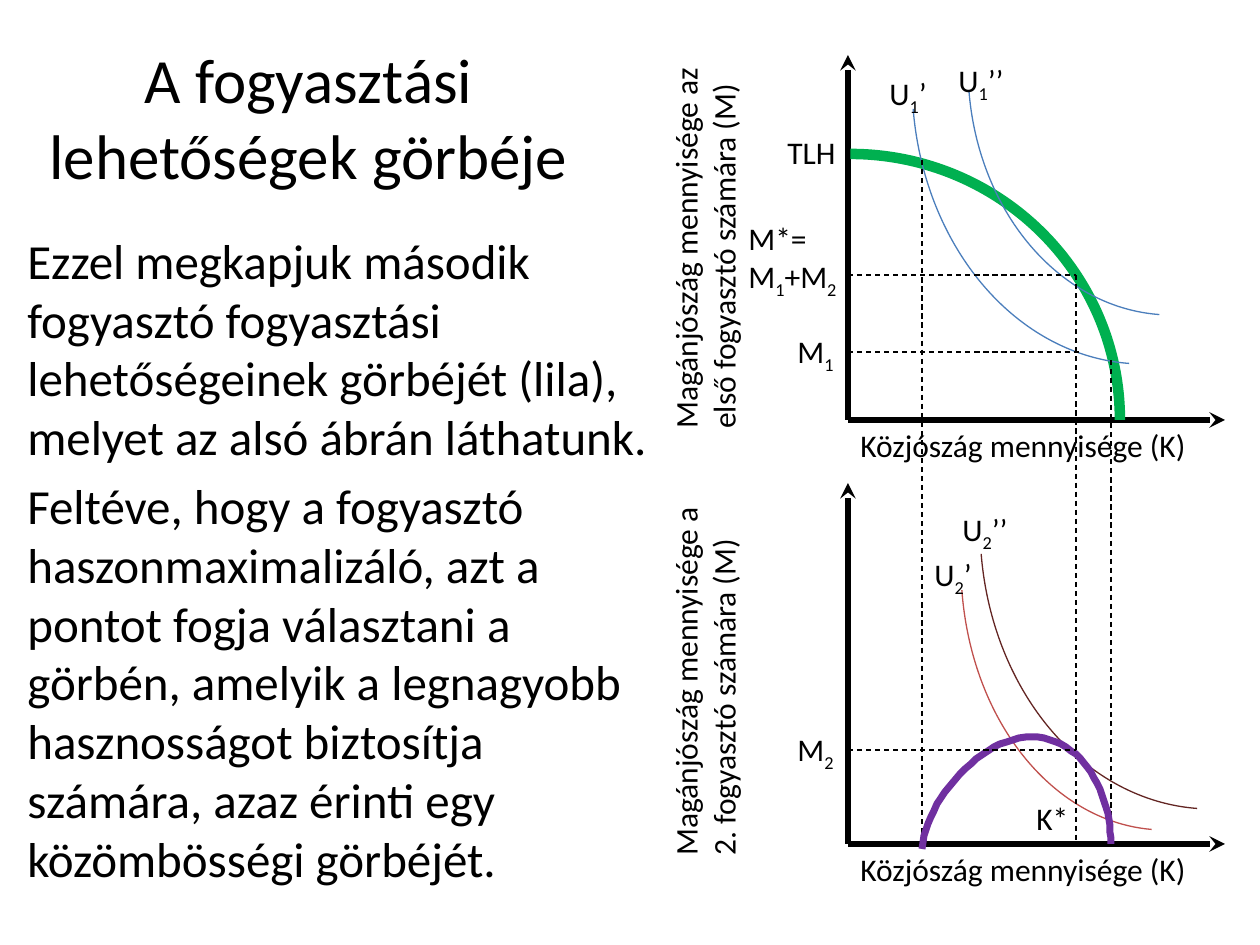
from lxml import etree
from pptx import Presentation
from pptx.dml.color import RGBColor
from pptx.enum.dml import MSO_LINE
from pptx.enum.shapes import MSO_CONNECTOR, MSO_SHAPE
from pptx.enum.text import MSO_ANCHOR, PP_ALIGN
from pptx.oxml.ns import qn
from pptx.util import Pt

PX = 914400 / 126
BLACK = RGBColor(0x00, 0x00, 0x00)
GREEN = RGBColor(0x00, 0xB0, 0x50)
BLUE = RGBColor(0x4B, 0x7E, 0xBC)
RED = RGBColor(0xC0, 0x50, 0x4D)
MAROON = RGBColor(0x63, 0x25, 0x23)
PURPLE = RGBColor(0x70, 0x30, 0xA0)
STRAIGHT = MSO_CONNECTOR.STRAIGHT
ARC = MSO_SHAPE.ARC
DASH = MSO_LINE.DASH
TOP, MIDDLE = MSO_ANCHOR.TOP, MSO_ANCHOR.MIDDLE
LEFT, CENTER = PP_ALIGN.LEFT, PP_ALIGN.CENTER

deck = Presentation()
deck.slide_width = round(1260 * PX)
deck.slide_height = round(945 * PX)
page = deck.slides.add_slide(deck.slide_layouts[6])


def add_text(text, at, size=18, align=LEFT, anchor=TOP, before=0, rotation=0):
    box = page.shapes.add_textbox(*(round(v * PX) for v in at))
    box.rotation = rotation
    frame = box.text_frame
    frame.word_wrap = True
    frame.vertical_anchor = anchor
    for index, line in enumerate(text.split("\n")):
        para = frame.add_paragraph() if index else frame.paragraphs[0]
        para.alignment = align
        para.space_before = Pt(before)
        for part, piece in enumerate(line.split("|")):
            for row, words in enumerate(piece.split("\v")):
                if row:
                    para.add_line_break()
                if not words:
                    continue
                span = para.add_run()
                span.text = words
                span.font.name = "Calibri"
                span.font.size = Pt(size)
                span.font.color.rgb = BLACK
                if part % 2:
                    span.font._element.set("baseline", "-25000")


def add_line(start, end, width=0.75, dash=None, arrow=False):
    line = page.shapes.add_connector(
        STRAIGHT, *(round(v * PX) for v in (*start, *end)))
    line.line.color.rgb = BLACK
    line.line.width = Pt(width)
    if dash:
        line.line.dash_style = dash
    if arrow:
        etree.SubElement(line.line._get_or_add_ln(), qn("a:tailEnd"), type="stealth")
    etree.SubElement(line._element.spPr, qn("a:effectLst"))


add_text("A fogyasztási lehetőségek görbéje", (25, 37, 567, 158),
         size=36, align=CENTER, anchor=MIDDLE)
add_text("Ezzel megkapjuk második fogyasztó fogyasztási lehetőségeinek görbéjét "
         "(lila), melyet az alsó ábrán láthatunk.\n"
         "Feltéve, hogy a fogyasztó haszonmaximalizáló, azt a pontot fogja "
         "választani a görbén, amelyik a legnagyobb hasznosságot biztosítja "
         "számára, azaz érinti egy közömbösségi görbéjét.",
         (15, 224, 665, 624), size=28, before=5.6)

ORIGIN_X, AXIS_END = 848, 1225
for base, top, title_top, title in (
    (420, 55, 193, "Magánjószág mennyisége az első fogyasztó számára (M)"),
    (844, 483, 620, "Magánjószág mennyisége a\v2. fogyasztó számára (M)"),
):
    add_line((ORIGIN_X, base), (AXIS_END, base), width=3, arrow=True)
    add_line((ORIGIN_X, base), (ORIGIN_X, top), width=3, arrow=True)
    add_text("Közjószág mennyisége (K)", (ORIGIN_X, base, 407, 50))
    add_text(title, (501, title_top, 407, 89), rotation=270)

FRONTIER = (270 * 0.6, 0)
INDIFFERENCE = (55.685, 103.833)
for at, angles, color, width in (
    ((581, 154, 539, 532), FRONTIER, GREEN, 6),
    ((968, -181, 407, 496), INDIFFERENCE, BLUE, 0.75),
    ((912, -202, 462, 566), INDIFFERENCE, BLUE, 0.75),
    ((961, 301, 407, 529), INDIFFERENCE, RED, 0.75),
    ((980, 243, 462, 566), INDIFFERENCE, MAROON, 0.75),
):
    arc = page.shapes.add_shape(ARC, *(round(v * PX) for v in at))
    arc.shadow.inherit = False
    arc.fill.background()
    arc.line.color.rgb = color
    arc.line.width = Pt(width)
    arc.adjustments[0], arc.adjustments[1] = angles

for x, top, bottom in ((922, 160, 844), (1076, 275, 847), (1111, 360, 844)):
    add_line((x, top), (x, bottom), dash=DASH)

STEPS = 24
points = []
for curve in (
    ((922, 849), (926, 800), (982, 736), (1032, 737)),
    ((1032, 737), (1084, 738), (1111, 795), (1111, 844)),
):
    for step in range(STEPS + 1):
        t = step / STEPS
        weights = ((1 - t) ** 3, 3 * t * (1 - t) ** 2, 3 * t * t * (1 - t), t ** 3)
        points.append([sum(w * p[axis] for w, p in zip(weights, curve))
                       for axis in (0, 1)])
builder = page.shapes.build_freeform(*points[0], scale=PX)
builder.add_line_segments(points[1:], close=False)
possibilities = builder.convert_to_shape()
possibilities.shadow.inherit = False
possibilities.fill.background()
possibilities.line.color.rgb = PURPLE
possibilities.line.width = Pt(4)

for y, right in ((275, 1076), (352, 1081), (750, 1076)):
    add_line((ORIGIN_X, y), (right, y), dash=DASH)

for label, left, top, width, height in (
    ("TLH", 775, 127, 79, 50),
    ("U|1|’", 877, 68, 69, 50),
    ("U|1|’’", 946, 55, 101, 50),
    ("U|2|’", 922, 549, 69, 50),
    ("U|2|’’", 950, 504, 101, 50),
    ("M*=\nM|1|+M|2|", 736, 213, 158, 89),
    ("M|1|", 785, 326, 69, 50),
    ("M|2|", 785, 724, 69, 50),
    ("K*", 1024, 793, 63, 50),
):
    add_text(label, (left, top, width, height))

deck.save("out.pptx")
